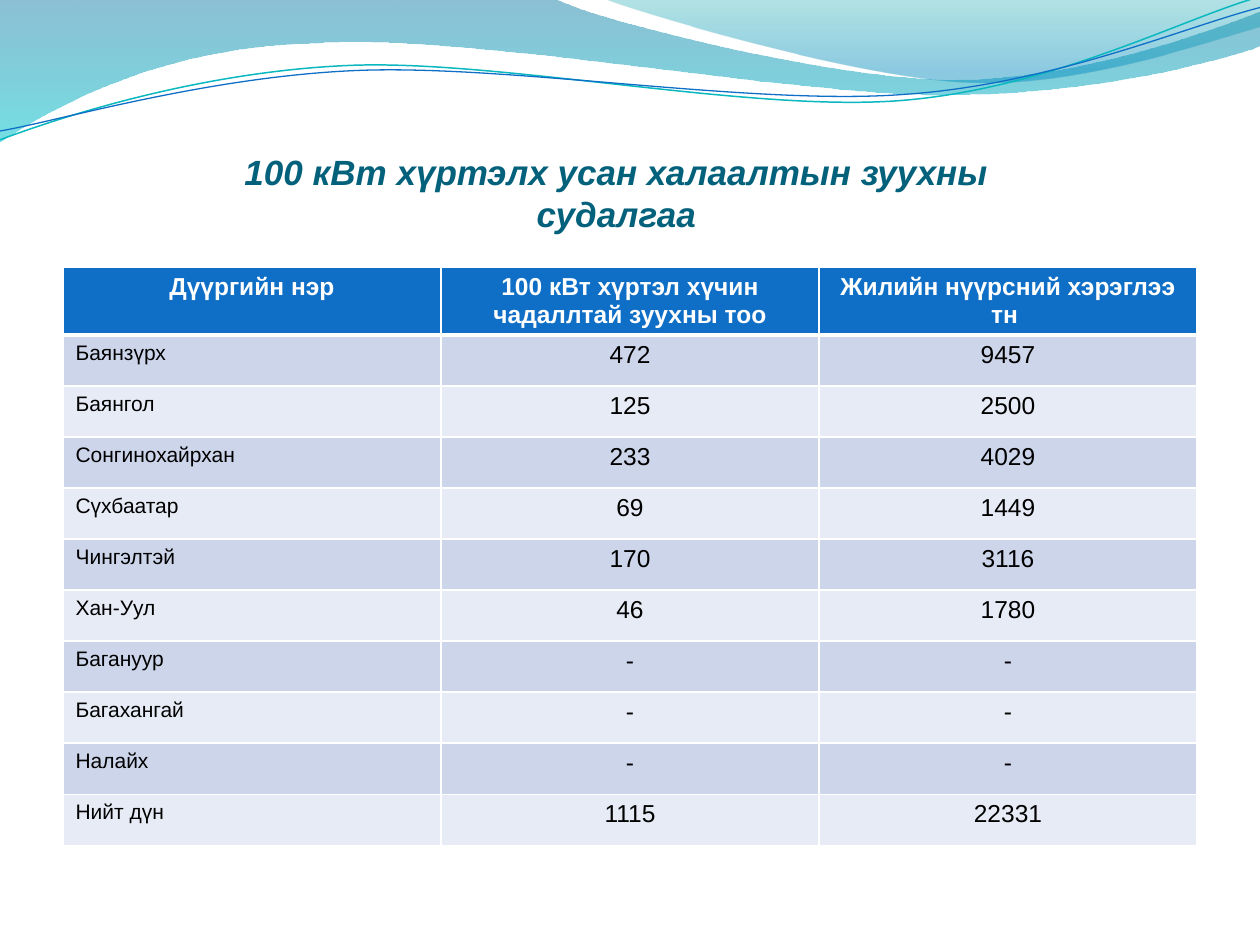
from copy import deepcopy
from dataclasses import dataclass

from lxml import etree
from pptx import Presentation, util as u
from pptx.dml.color import RGBColor
from pptx.enum import text as t
from pptx.oxml.ns import qn

FONT = "Arial"
BLUE, WHITE, BLACK, TEAL = "0F6FC6", "FFFFFF", "000000", "04617B"
BANDS = ("CCD5EA", "E7EBF5")

HEAD = ("Дүүргийн нэр", "100 кВт хүртэл хүчин чадаллтай зуухны тоо",
        "Жилийн нүүрсний хэрэглээ тн ")
ROWS = (
    ("Баянзүрх", "472", "9457"),
    ("Баянгол", "125", "2500"),
    ("Сонгинохайрхан", "233", "4029"),
    ("Сүхбаатар", "69", "1449"),
    ("Чингэлтэй", "170", "3116"),
    ("Хан-Уул", "46", "1780"),
    ("Багануур", "-", "-"),
    ("Багахангай", "-", "-"),
    ("Налайх", "-", "-"),
    ("Нийт дүн", "1115", "22331"),
)


@dataclass
class Wave:
    """An outline in inches: each leg is a line (2 numbers) or a Bézier (6)."""
    start: tuple
    legs: tuple
    stops: tuple = ()  # (position, colour, opacity), all in percent
    line: str = ""
    width: float = 0


WAVES = (
    Wave((0, 0), ((4.4, -0.01), (4.76, 0.17, 6.64, 0.63, 7.58, 0.63),
                  (8.53, 0.63, 9.58, 0.26, 10, 0.09), (10.01, 0.36),
                  (9.83, 0.44, 8.7, 0.76, 7.46, 0.75),
                  (6.22, 0.75, 3.82, 0.28, 2.57, 0.34),
                  (1.29, 0.36, 0.46, 0.83, -0.01, 1.13), (0, 0)),
         stops=((0, "0074A1", 45), (100, "00C6CF", 55))),
    Wave((4.79, -0.01), ((5.09, 0.11, 6.82, 0.62, 7.69, 0.65),
                         (8.56, 0.69, 9.61, 0.32, 10, 0.21), (10, 0),
                         (4.79, -0.01)),
         stops=((0, "00A1A9", 30), (80, "008BBF", 45))),
    Wave((0, 1.11), ((0.48, 0.93, 1.58, 0.57, 2.77, 0.52),
                     (3.95, 0.47, 5.93, 0.89, 7.13, 0.8),
                     (8.33, 0.71, 9.38, 0.15, 9.98, -0.02)),
         line="0AB8BF", width=0.85),
    Wave((0, 1.04), ((0.47, 0.96, 1.64, 0.61, 2.83, 0.56),
                     (4.03, 0.51, 5.97, 0.84, 7.17, 0.75),
                     (8.36, 0.67, 9.41, 0.21, 10, 0.06)),
         line=BLUE, width=0.75),
)


def rgb(code: str) -> RGBColor:
    return RGBColor.from_string(code)


def bend(shape, legs: tuple) -> None:
    """Join the three points of each Bézier leg into one curve."""
    steps = iter(list(shape._element.iter(qn("a:lnTo"))))
    for leg in legs:
        first = next(steps)
        if len(leg) == 2:
            continue
        first.tag = qn("a:cubicBezTo")
        for _ in range(2):
            step = next(steps)
            first.append(step[0])
            step.getparent().remove(step)


def draw_wave(slide, wave: Wave) -> None:
    pen = slide.shapes.build_freeform(*map(u.Inches, wave.start))
    pen.add_line_segments(
        [(u.Inches(leg[i]), u.Inches(leg[i + 1]))
         for leg in wave.legs for i in range(0, len(leg), 2)],
        close=bool(wave.stops))
    shape = pen.convert_to_shape()
    bend(shape, wave.legs)
    shape.shadow.inherit = False
    if not wave.stops:
        shape.fill.background()
        shape.line.color.rgb = rgb(wave.line)
        shape.line.width = u.Pt(wave.width)
        return
    shape.line.fill.background()
    shape.fill.gradient()
    shape.fill.gradient_angle = 270
    for stop, (pos, code, _) in zip(shape.fill.gradient_stops, wave.stops):
        stop.position = pos / 100
        stop.color.rgb = rgb(code)
    for tone, (_, _, seen) in zip(shape._element.spPr.iter(qn("a:srgbClr")), wave.stops):
        etree.SubElement(tone, qn("a:alpha"), val=str(seen * 1000))


def write(frame, words: str, size: float, color: str, bold=False, italic=False,
          align=t.PP_ALIGN.CENTER) -> None:
    para = frame.paragraphs[0]
    para.text = words
    para.alignment = align
    for run in para.runs:
        font = run.font
        font.name, font.size, font.bold, font.italic = FONT, u.Pt(size), bold, italic
        font.color.rgb = rgb(color)
    for gap in para._p.findall(qn("a:br")):
        gap.insert(0, deepcopy(para.runs[0]._r.rPr))


def edge(cell, low: float) -> None:
    """Give a cell white borders, the bottom one `low` points wide."""
    props = cell._tc.get_or_add_tcPr()
    for side, width in (("L", 1), ("R", 1), ("T", 1), ("B", low)):
        line = etree.SubElement(props, qn(f"a:ln{side}"), w=str(u.Pt(width)))
        fill = etree.SubElement(line, qn("a:solidFill"))
        etree.SubElement(fill, qn("a:srgbClr"), val=WHITE)


def draw_table(slide) -> None:
    data = (HEAD, *ROWS)
    table = slide.shapes.add_table(
        len(data), len(HEAD), u.Inches(0.5), u.Inches(2.12),
        u.Inches(9), u.Inches(4.46)).table
    for r, row in enumerate(data):
        for c, words in enumerate(row):
            cell = table.cell(r, c)
            top = r == 0
            edge(cell, 3 if top else 1)
            cell.fill.solid()
            cell.fill.fore_color.rgb = rgb(BLUE if top else BANDS[(r - 1) % 2])
            name = c == 0 and not top
            write(cell.text_frame, words, 12 if name else 14,
                  WHITE if top else BLACK, bold=top,
                  align=t.PP_ALIGN.LEFT if name else t.PP_ALIGN.CENTER)


def draw_title(slide) -> None:
    title = slide.shapes.title
    title.left, title.top = u.Inches(0.43), u.Inches(0.92)
    title.width, title.height = u.Inches(9), u.Inches(0.94)
    frame = title.text_frame
    frame.word_wrap = True
    frame.auto_size = t.MSO_AUTO_SIZE.NONE
    frame.vertical_anchor = t.MSO_ANCHOR.BOTTOM
    frame.margin_left = frame.margin_right = frame.margin_bottom = 0
    frame.margin_top = u.Inches(0.05)
    write(frame, "100 кВт хүртэлх усан халаалтын зуухны \nсудалгаа ", 20, TEAL,
          bold=True, italic=True)
    title._element.getparent().append(title._element)  # in front of the waves


def main() -> None:
    deck = Presentation()
    deck.slide_width, deck.slide_height = u.Inches(10), u.Inches(7.5)
    slide = deck.slides.add_slide(deck.slide_layouts[5])
    for wave in WAVES:
        draw_wave(slide, wave)
    draw_title(slide)
    draw_table(slide)
    deck.save("out.pptx")


if __name__ == "__main__":
    main()
